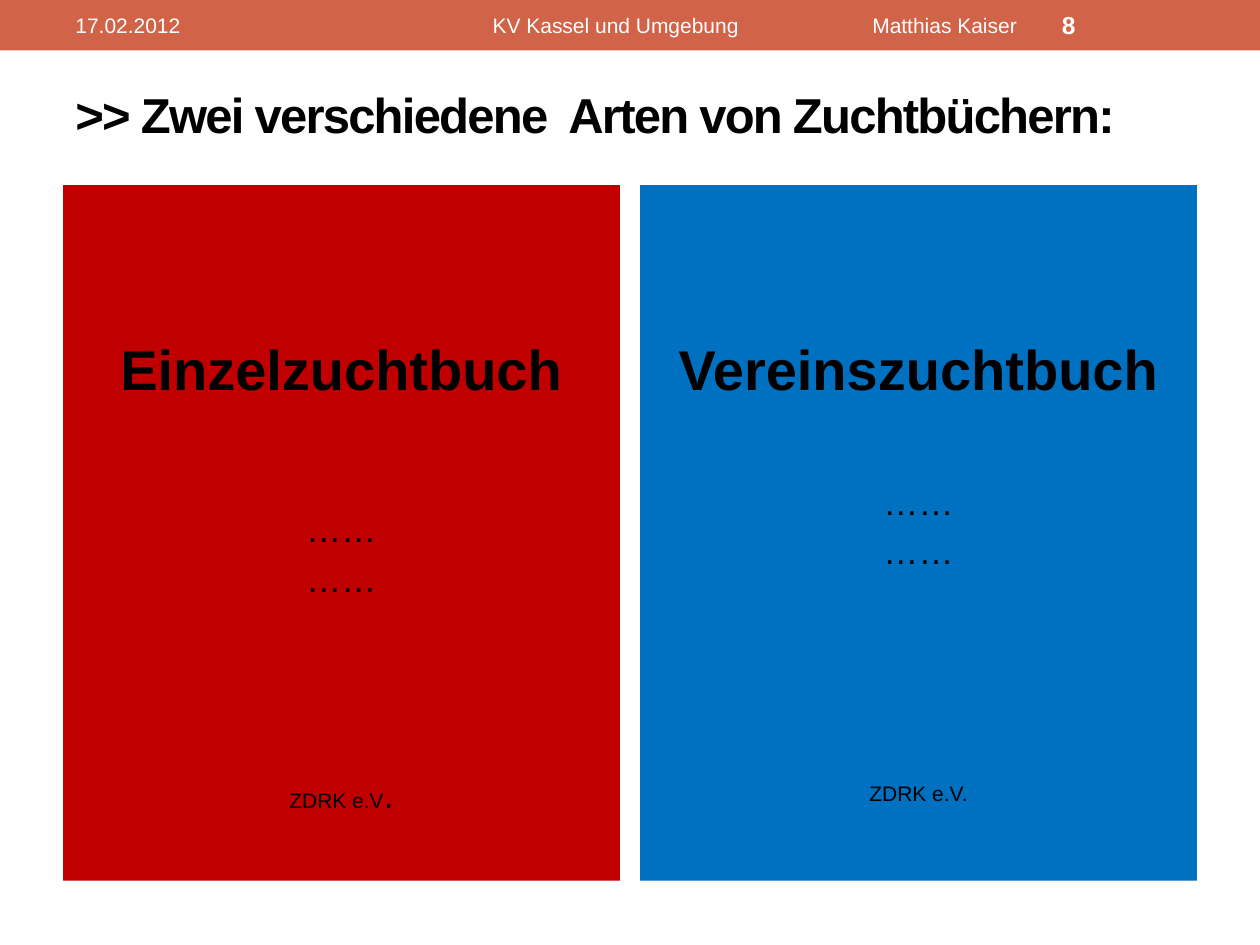
from lxml.etree import SubElement
from pptx import Presentation
from pptx.dml.color import RGBColor
from pptx.enum.shapes import MSO_SHAPE as Shape
from pptx.enum.text import MSO_ANCHOR as Anchor, PP_ALIGN as Align
from pptx.oxml.ns import qn
from pptx.util import Pt

BLACK = RGBColor(0, 0, 0)
WHITE = RGBColor(255, 255, 255)
TERRACOTTA = RGBColor(0xD1, 0x63, 0x49)
RED = RGBColor(0xC0, 0, 0)
BLUE = RGBColor(0, 0x70, 0xC0)


class SlideBuilder:
    font = "Arial"
    inset = 7.2

    def __init__(self, page):
        self.page = page

    def style(self, para, size, color=BLACK, bold=False):
        para.font.name = self.font
        para.font.size = Pt(size)
        para.font.bold = bold
        para.font.color.rgb = color

    def rectangle(self, left, top, width, height, color):
        box = self.page.shapes.add_shape(
            Shape.RECTANGLE, Pt(left), Pt(top), Pt(width), Pt(height))
        box.shadow.inherit = False
        box.fill.solid()
        box.fill.fore_color.rgb = color
        box.line.fill.background()
        return box

    def label(self, text, left, top, width, height, size, color, bold=False):
        box = self.page.shapes.add_textbox(Pt(left), Pt(top), Pt(width), Pt(height))
        frame = box.text_frame
        frame.word_wrap = True
        frame.vertical_anchor = Anchor.MIDDLE
        para = frame.paragraphs[0]
        para.add_run().text = text
        self.style(para, size, color, bold)
        return box

    def tab_stop(self, para, position):
        tabs = para._p.get_or_add_pPr()
        stops = SubElement(tabs, qn("a:tabLst"))
        tabs.insert(0, stops)
        SubElement(stops, qn("a:tab"), pos=str(Pt(position)), algn="l")

    def book(self, left, color, title, dots_gap, footer_gap, footer):
        """Draw a book cover; footer is a list of (text, size) spans."""
        box = self.rectangle(left, 105.84, 318.24, 397.44, color)
        frame = box.text_frame
        frame.word_wrap = True
        frame.vertical_anchor = Anchor.TOP
        frame.margin_top = Pt(85)
        lines = [
            ([(title, 32)], 0, True),
            ([("……", 20)], dots_gap, False),
            ([("……", 20)], 4.5, False),
            (footer, footer_gap, False),
        ]
        for index, (spans, gap, bold) in enumerate(lines):
            para = frame.add_paragraph() if index else frame.paragraphs[0]
            para.alignment = Align.CENTER
            para.space_before = Pt(gap)
            base_size = spans[0][1]
            self.style(para, base_size, bold=bold)
            for text, size in spans:
                span = para.add_run()
                span.text = text
                if size != base_size:
                    span.font.size = Pt(size)


def main():
    deck = Presentation()
    deck.slide_width, deck.slide_height = Pt(720), Pt(540)
    builder = SlideBuilder(deck.slides.add_slide(deck.slide_layouts[6]))

    builder.rectangle(0, 0, 720, 28.8, TERRACOTTA)
    title = builder.label(">> Zwei verschiedene  Arten von Zuchtbüchern:",
                          36, 41.76, 648, 46.8, 28, BLACK, bold=True)
    title_para = title.text_frame.paragraphs[0]
    title_para.font._element.set("spc", "-100")

    builder.book(36, RED, "Einzelzuchtbuch", 61, 99,
                 [("ZDRK e.V", 12), (".", 20)])
    builder.book(365.76, BLUE, "Vereinszuchtbuch", 45, 119,
                 [("ZDRK e.V.", 12)])

    header = {"top": 1.44, "height": 25.92, "color": WHITE}
    builder.label("17.02.2012", left=36, width=228, size=12, **header)
    author = builder.label("KV Kassel und Umgebung\tMatthias Kaiser",
                           left=270, width=324, size=12, **header)
    author.text_frame.margin_left = Pt(11.5)
    builder.tab_stop(author.text_frame.paragraphs[0], 217)
    builder.label("8", left=599.76, width=84.24, size=14, bold=True, **header)

    deck.save("out.pptx")


if __name__ == "__main__":
    main()
